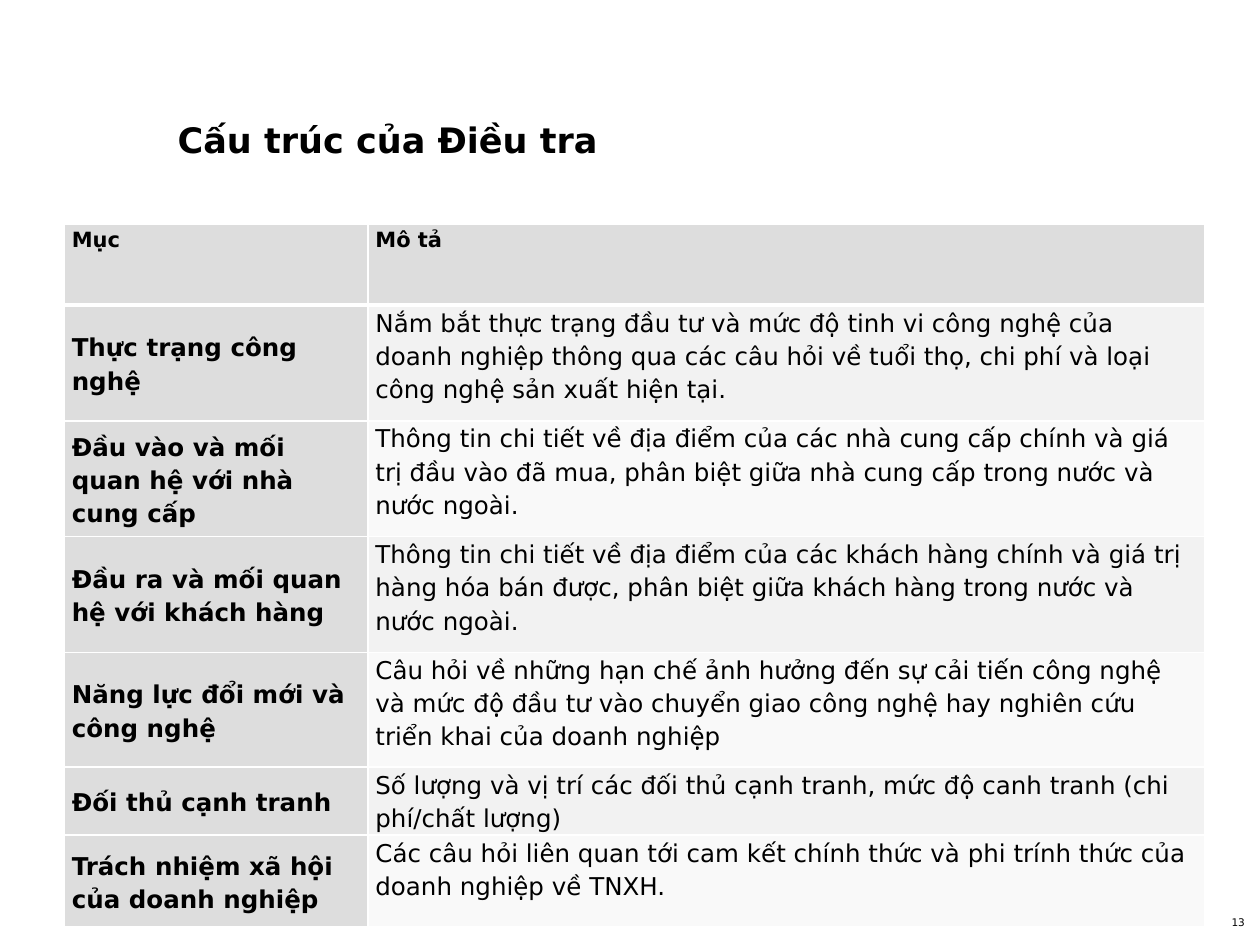
import dataclasses
import typing

import lxml.etree
import pptx
import pptx.dml.color
import pptx.enum.text
import pptx.oxml.ns
import pptx.util

Inches = pptx.util.Inches
Anchor = pptx.enum.text.MSO_ANCHOR
Align = pptx.enum.text.PP_ALIGN


@dataclasses.dataclass(frozen=True)
class Theme:
    font: str = "DejaVu Sans"
    text: str = "000000"
    border: str = "FFFFFF"
    label_fill: str = "DDDDDD"
    band_fills: tuple[str, str] = ("F2F2F2", "F9F9F9")
    title_size: int = 20
    header_size: int = 12
    body_size: int = 14
    number_size: int = 6
    border_width: int = 1
    header_border_width: int = 3
    line_spacing: float = 1.15


@dataclasses.dataclass(frozen=True)
class Label:
    text: str
    box: tuple[float, float, float, float]
    size: int
    bold: bool = False
    align: Align = Align.LEFT


class Section(typing.NamedTuple):
    name: str
    description: str
    height: float


THEME = Theme()

LABELS = [
    Label("13", (9.42, 7.27, 0.46, 0.17), THEME.number_size, align=Align.RIGHT),
    Label("Cấu trúc của Điều tra", (1.41, 0.94, 6.29, 0.65), THEME.title_size, bold=True),
]

HEADER = Section("Mục", "Mô tả", 0.64)
SECTIONS = [
    Section(
        "Thực trạng công nghệ",
        "Nắm bắt thực trạng đầu tư và mức độ tinh vi công nghệ của doanh nghiệp "
        "thông qua các câu hỏi về tuổi thọ, chi phí và loại công nghệ sản xuất hiện tại.",
        0.92,
    ),
    Section(
        "Đầu vào và mối quan hệ với nhà cung cấp",
        "Thông tin chi tiết về địa điểm của các nhà cung cấp chính và giá trị đầu vào "
        "đã mua, phân biệt giữa nhà cung cấp trong nước và nước ngoài.",
        0.92,
    ),
    Section(
        "Đầu ra và mối quan hệ với khách hàng",
        "Thông tin chi tiết về địa điểm của các khách hàng chính và giá trị hàng hóa "
        "bán được, phân biệt giữa khách hàng trong nước và nước ngoài.",
        0.92,
    ),
    Section(
        "Năng lực đổi mới và công nghệ",
        "Câu hỏi về những hạn chế ảnh hưởng đến sự cải tiến công nghệ và mức độ đầu tư "
        "vào chuyển giao công nghệ hay nghiên cứu triển khai của doanh nghiệp",
        0.91,
    ),
    Section(
        "Đối thủ cạnh tranh",
        "Số lượng và vị trí các đối thủ cạnh tranh, mức độ canh tranh (chi phí/chất lượng)",
        0.54,
    ),
    Section(
        "Trách nhiệm xã hội của doanh nghiệp",
        "Các câu hỏi liên quan tới cam kết chính thức và phi trính thức của doanh nghiệp "
        "về TNXH.",
        0.73,
    ),
]
COLUMN_WIDTHS = (2.41, 6.64)


def rgb(color: str) -> pptx.dml.color.RGBColor:
    return pptx.dml.color.RGBColor.from_string(color)


def format_run(r, size: int, bold: bool) -> None:
    r.font.name = THEME.font
    r.font.size = pptx.util.Pt(size)
    r.font.bold = bold
    r.font.color.rgb = rgb(THEME.text)


def draw_label(slide, label: Label) -> None:
    sp = slide.shapes.add_textbox(*map(Inches, label.box))
    tf = sp.text_frame
    tf.word_wrap = True
    tf.margin_left = tf.margin_right = tf.margin_top = tf.margin_bottom = 0
    tf.text = label.text
    p = tf.paragraphs[0]
    p.alignment = label.align
    format_run(p.runs[0], label.size, label.bold)


def set_borders(cell, top: int, bottom: int) -> None:
    qn = pptx.oxml.ns.qn
    tc_pr = cell._tc.get_or_add_tcPr()
    widths = {"L": THEME.border_width, "R": THEME.border_width, "T": top, "B": bottom}
    for side, width in widths.items():
        ln = lxml.etree.SubElement(tc_pr, qn(f"a:ln{side}"), w=str(pptx.util.Pt(width)))
        fill = lxml.etree.SubElement(ln, qn("a:solidFill"))
        lxml.etree.SubElement(fill, qn("a:srgbClr"), val=THEME.border)


def draw_cell(cell, text: str, row: int, column: int) -> None:
    is_header, is_name = row == 0, column == 0
    set_borders(
        cell,
        top=THEME.header_border_width if row == 1 else THEME.border_width,
        bottom=THEME.header_border_width if is_header else THEME.border_width,
    )
    cell.fill.solid()
    band = THEME.band_fills[(row - 1) % 2]
    cell.fill.fore_color.rgb = rgb(THEME.label_fill if is_header or is_name else band)
    cell.margin_left = cell.margin_right = Inches(0.06)
    cell.margin_top = cell.margin_bottom = 0
    cell.vertical_anchor = Anchor.MIDDLE if is_name and not is_header else Anchor.TOP
    cell.text_frame.text = text
    p = cell.text_frame.paragraphs[0]
    p.line_spacing = THEME.line_spacing
    size = THEME.header_size if is_header else THEME.body_size
    format_run(p.runs[0], size, is_header or is_name)


def draw_table(slide, sections: list[Section]) -> None:
    height = sum(section.height for section in sections)
    table = slide.shapes.add_table(
        len(sections), len(COLUMN_WIDTHS),
        Inches(0.51), Inches(1.78), Inches(sum(COLUMN_WIDTHS)), Inches(height),
    ).table
    for column, width in zip(table.columns, COLUMN_WIDTHS):
        column.width = Inches(width)
    for row, section in enumerate(sections):
        table.rows[row].height = Inches(section.height)
        for column, text in enumerate((section.name, section.description)):
            draw_cell(table.cell(row, column), text, row, column)


def main() -> None:
    prs = pptx.Presentation()
    prs.slide_width, prs.slide_height = Inches(10), Inches(7.5)
    slide = prs.slides.add_slide(prs.slide_layouts[6])
    for label in LABELS:
        draw_label(slide, label)
    draw_table(slide, [HEADER, *SECTIONS])
    prs.save("out.pptx")


if __name__ == "__main__":
    main()
